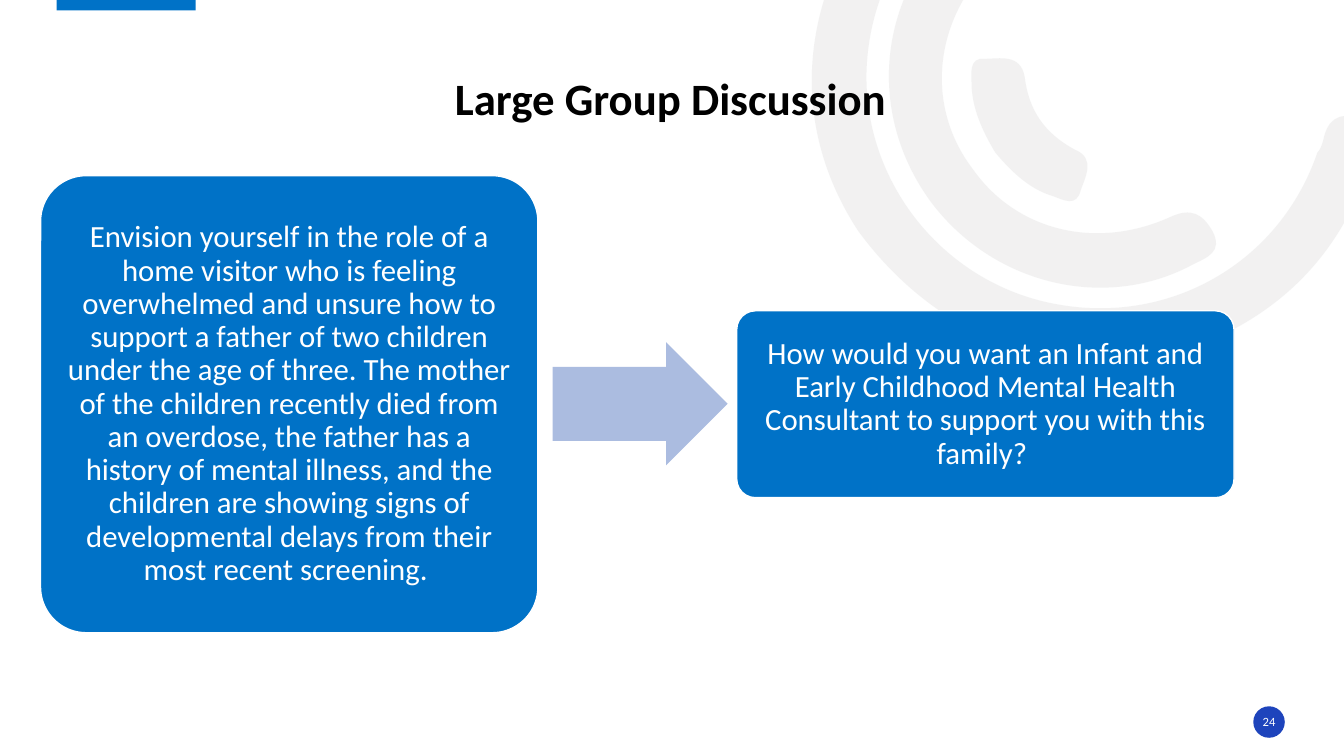
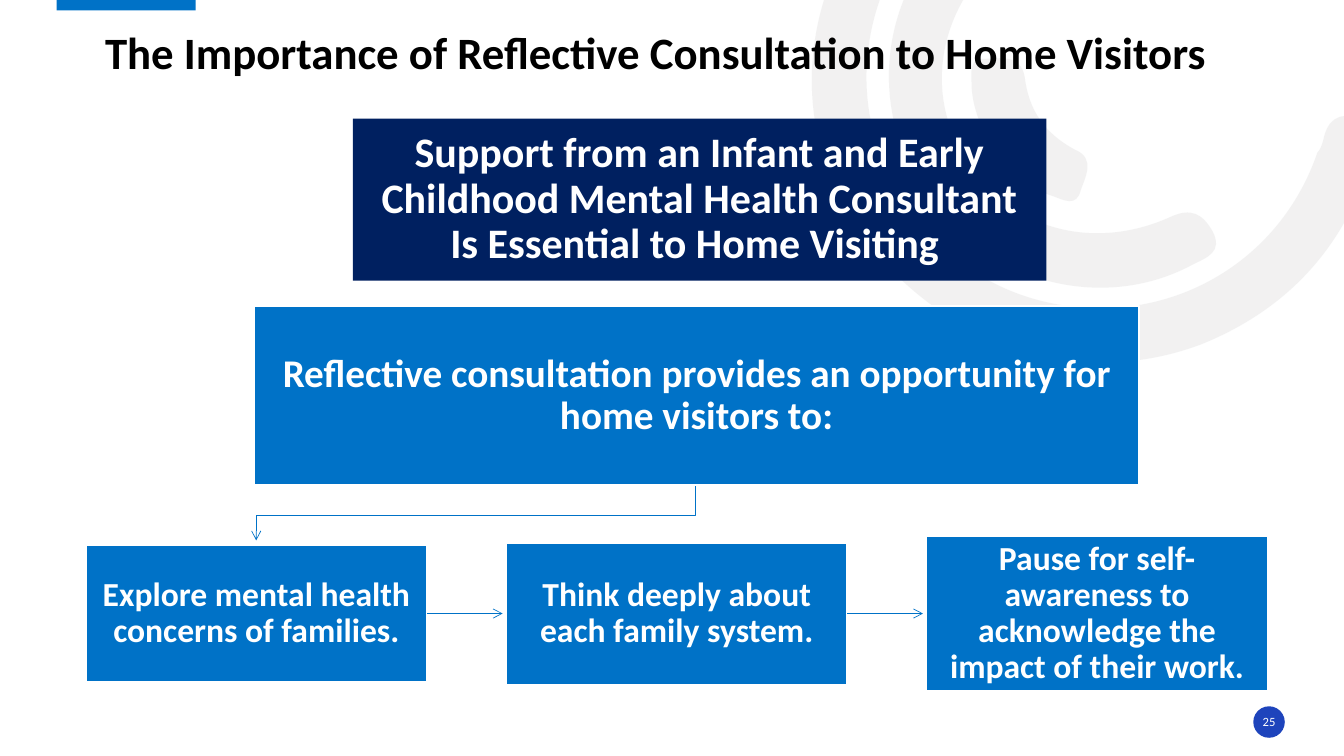
from pptx import Presentation
from pptx.dml.color import RGBColor
from pptx.enum.shapes import MSO_CONNECTOR, MSO_SHAPE
from pptx.enum.text import MSO_ANCHOR, MSO_AUTO_SIZE, PP_ALIGN
from pptx.oxml.ns import qn
from pptx.util import Pt
from lxml.etree import SubElement

FONT = "Calibri"
BLUE = "0072C7"
NAVY = "002060"
BADGE_BLUE = "1E44BC"
PALE_BLUE = "ABBCE0"
GRAY = "E7E6E6"
WHITE = "FFFFFF"
BLACK = "000000"

OUTER_ARC = [
    (613, 165), (575, 107), (567, 36), (603, -36),
    (641, -109), (703, -146), (785, -149), (796, -149), (807, -151), (814, -140),
    (824, -126), (811, -111), (791, -111), (696, -111), (623, -42), (619, 49),
    (616, 130), (674, 202), (753, 217), (835, 233), (914, 188), (941, 109),
    (943, 107), (944, 104), (945, 101), (948, 86), (955, 80), (971, 84),
    (989, 89), (984, 102), (980, 112), (961, 176), (920, 221), (858, 246),
    (770, 279), (674, 248), (613, 165),
]
MIDDLE_ARC = [
    (664, 143), (621, 83), (626, 5), (677, -49),
    (685, -57), (693, -68), (706, -56), (716, -46), (718, -36), (705, -23),
    (666, 19), (662, 78), (695, 121), (726, 165), (783, 179), (836, 155),
    (851, 148), (859, 153), (866, 165), (874, 180), (862, 184), (852, 189),
    (789, 223), (708, 203), (664, 143),
]
INNER_ARC = [
    (711, 109), (702, 94), (694, 77), (694, 59),
    (694, 53), (692, 41), (703, 42), (714, 42), (729, 38), (732, 55),
    (735, 79), (746, 95), (768, 107), (783, 113), (775, 127), (772, 136),
    (769, 148), (760, 143), (752, 140), (735, 135), (722, 122), (711, 109),
]


def color(hex_string):
    return RGBColor.from_string(hex_string)


def write(frame, text, size, ink=WHITE, bold=False, align=PP_ALIGN.CENTER,
          anchor=MSO_ANCHOR.MIDDLE, inset=0, wrap=True):
    frame.word_wrap = wrap
    frame.auto_size = MSO_AUTO_SIZE.NONE
    frame.vertical_anchor = anchor
    frame.margin_left = frame.margin_right = Pt(inset)
    frame.margin_top = frame.margin_bottom = Pt(inset)
    frame.text = text
    paragraph = frame.paragraphs[0]
    paragraph.alignment = align
    paragraph.line_spacing = 0.9
    paragraph.font.name = FONT
    paragraph.font.size = Pt(size)
    paragraph.font.bold = bold
    paragraph.font.color.rgb = color(ink)


def add_block(slide, kind, bounds, fill, outline=0, adjustments=()):
    shape = slide.shapes.add_shape(kind, *map(Pt, bounds))
    shape.shadow.inherit = False
    shape.fill.solid()
    shape.fill.fore_color.rgb = color(fill)
    if outline:
        shape.line.color.rgb = color(WHITE)
        shape.line.width = Pt(outline)
    else:
        shape.line.fill.background()
    for index, value in enumerate(adjustments):
        shape.adjustments[index] = value
    return shape


def add_rounded_box(slide, bounds, text):
    shape = add_block(slide, MSO_SHAPE.ROUNDED_RECTANGLE, bounds, BLUE, 1, [0.1])
    write(shape.text_frame, text, 22, inset=6.5)


def add_box(slide, bounds, text, size, fill=BLUE, outline=1.5):
    shape = add_block(slide, MSO_SHAPE.RECTANGLE, bounds, fill, outline)
    write(shape.text_frame, text, size, bold=True, inset=12)


def style_arrow(shape):
    shape.line.color.rgb = color(BLUE)
    shape.line.width = Pt(0.5)
    properties = shape._element.spPr
    SubElement(properties.find(qn("a:ln")), qn("a:tailEnd"), type="arrow")
    SubElement(properties, qn("a:effectLst"))


def add_straight_arrow(slide, start, end, middle):
    arrow = slide.shapes.add_connector(
        MSO_CONNECTOR.STRAIGHT, Pt(start), Pt(middle), Pt(end), Pt(middle))
    style_arrow(arrow)


def add_outline(slide, points):
    builder = slide.shapes.build_freeform(*points[0], scale=Pt(1))
    builder.add_line_segments(points[1:], close=False)
    return builder.convert_to_shape()


def add_bent_arrow(slide, points):
    arrow = add_outline(slide, points)
    arrow.fill.background()
    style_arrow(arrow)


def bend_segments(shape):
    outline = shape._element.spPr.find(".//" + qn("a:path"))
    for index, segment in enumerate(outline.findall(qn("a:lnTo"))):
        if index % 3 == 0:
            curve = SubElement(outline, qn("a:cubicBezTo"))
        curve.append(segment[0])
        outline.remove(segment)
    SubElement(outline, qn("a:close"))


def add_arc(slide, nodes):
    arc = add_outline(slide, nodes)
    bend_segments(arc)
    arc.shadow.inherit = False
    arc.line.fill.background()
    arc.fill.solid()
    arc.fill.fore_color.rgb = color(GRAY)
    SubElement(arc._element.spPr.find(".//" + qn("a:srgbClr")), qn("a:alpha"), val="53000")


def add_slide(presentation, number):
    slide = presentation.slides.add_slide(presentation.slide_layouts[5])
    for nodes in (OUTER_ARC, MIDDLE_ARC, INNER_ARC):
        add_arc(slide, nodes)
    add_block(slide, MSO_SHAPE.RECTANGLE, (40.5, -1.25, 99.25, 8.75), BLUE)
    badge = add_block(slide, MSO_SHAPE.OVAL, (895.25, 504.5, 22.5, 22.5), BADGE_BLUE)
    write(badge.text_frame, str(number), 9, wrap=False)
    return slide


def set_title(slide, text, bounds, align, anchor):
    heading = slide.shapes.title
    heading.left, heading.top, heading.width, heading.height = map(Pt, bounds)
    write(heading.text_frame, text, 32, BLACK, True, align, anchor)
    slide.shapes._spTree.append(heading._element)


def build_discussion(presentation):
    slide = add_slide(presentation, 24)
    set_title(slide, "Large Group Discussion", (40.25, 54.5, 877.5, 73),
              PP_ALIGN.CENTER, MSO_ANCHOR.TOP)
    add_rounded_box(
        slide, (29, 125.5, 355.25, 326.5),
        "Envision yourself in the role of a home visitor who is feeling overwhelmed and "
        "unsure how to support a father of two children under the age of three. The mother "
        "of the children recently died from an overdose, the father has a history of mental "
        "illness, and the children are showing signs of developmental delays from their "
        "most recent screening. ")
    add_block(slide, MSO_SHAPE.RIGHT_ARROW, (394.75, 244.5, 125, 88), PALE_BLUE,
              adjustments=[0.6, 0.5])
    add_rounded_box(
        slide, (526.25, 222, 355.25, 133.5),
        "How would you want an Infant and Early Childhood Mental Health Consultant to "
        "support you with this family? ")


def build_importance(presentation):
    slide = add_slide(presentation, 25)
    add_bent_arrow(slide, [(497.25, 346.5), (497.25, 368), (183, 368), (183, 386.5)])
    add_box(slide, (181.5, 218.5, 632, 128),
            "Reflective consultation provides an opportunity for home visitors to:", 28)

    opportunities = [
        ("Explore mental health concerns of families.", 98),
        ("Think deeply about each family system.", 101.5),
        ("Pause for self-awareness to acknowledge the impact of their work.", 111.5),
    ]
    first_left, step, width, middle = 61.25, 300.25, 243.75, 438.25
    for index, (text, height) in enumerate(opportunities):
        left = first_left + index * step
        if index:
            add_straight_arrow(slide, left - step + width, left - 2.5, middle)
        add_box(slide, (left, middle - height / 2, width, height), text, 24)

    set_title(slide, "The Importance of Reflective Consultation to Home Visitors",
              (75, 0, 823.75, 56.5), PP_ALIGN.LEFT, MSO_ANCHOR.BOTTOM)
    add_box(slide, (252, 84.75, 495.5, 115.75),
            "Support from an Infant and Early Childhood Mental Health Consultant "
            "Is Essential to Home Visiting ", 30, NAVY, 0)


def main():
    presentation = Presentation()
    presentation.slide_width = Pt(960)
    presentation.slide_height = Pt(540)
    build_discussion(presentation)
    build_importance(presentation)
    presentation.save("out.pptx")


if __name__ == "__main__":
    main()
